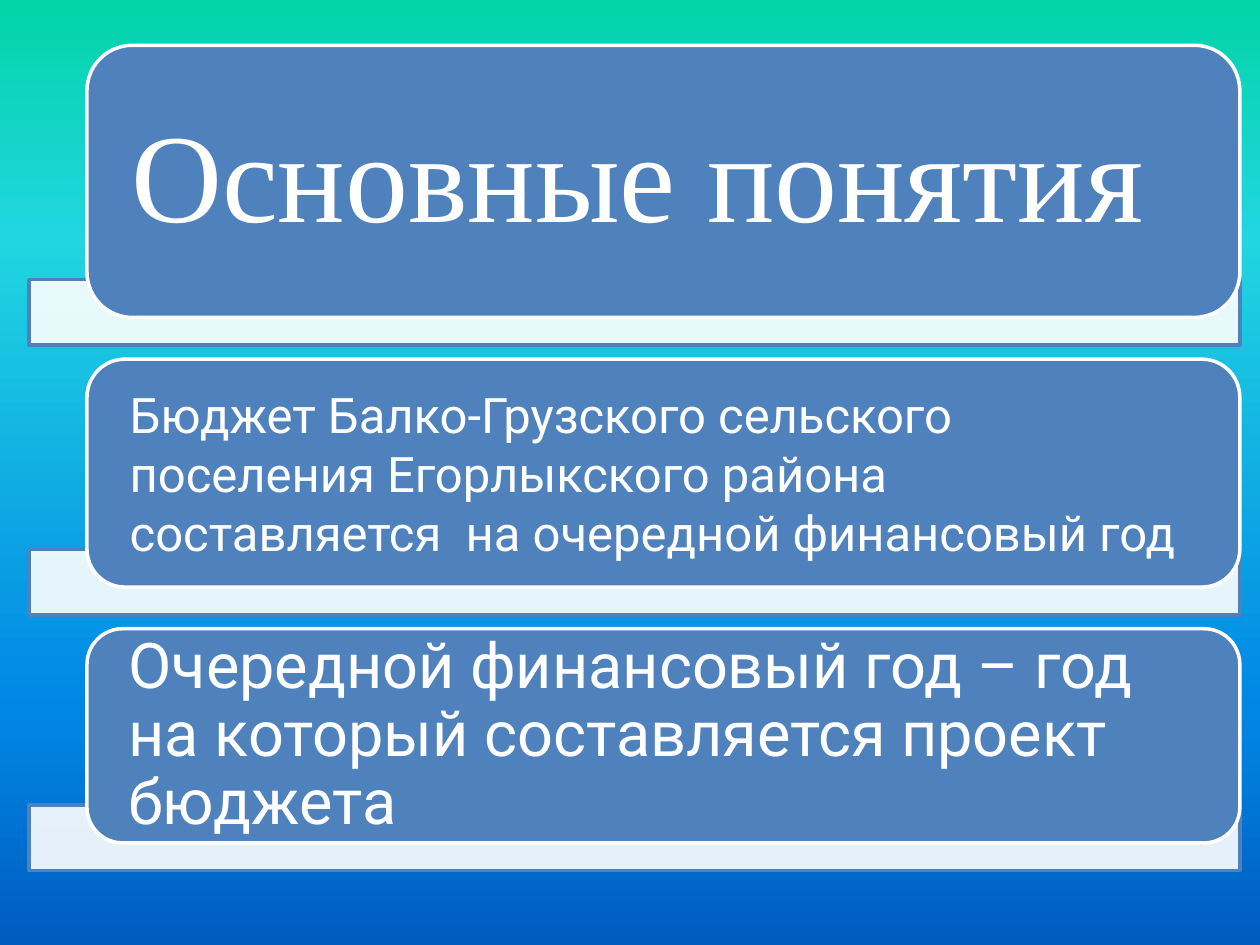
"""Build the slide of basic budget concepts: three rounded panels over white bars."""
from lxml import etree
from pptx import Presentation
from pptx.dml.color import RGBColor
from pptx.enum.shapes import MSO_SHAPE as Shape
from pptx.enum.text import MSO_ANCHOR as Anchor, PP_ALIGN as Align
from pptx.oxml.ns import qn
from pptx.util import Inches, Pt

BLUE, WHITE = "4F81BD", "FFFFFF"
GRADIENT = [(0, "03D4A8"), (25, "21D6E0"), (75, "0087E6"), (100, "005CBF")]
PANELS = [
    (0.36, 2.16, 0.1, "Основные понятия", 72, "Times New Roman", 0.9),
    (2.85, 1.81, 0.09, "Бюджет Балко-Грузского сельского поселения Егорлыкского района "
     "составляется  на очередной финансовый год", 28, "Roboto", 1.0),
    (4.99, 1.7, 0.08, "Очередной финансовый год – год на который составляется проект бюджета",
     36, "Roboto", 0.9),
]


def color(value):
    return RGBColor.from_string(value)


def add_block(slide, kind, left, top, width, height, fill, line):
    shape = slide.shapes.add_shape(kind, Inches(left), Inches(top), Inches(width), Inches(height))
    shape.shadow.inherit = False
    shape.fill.solid()
    shape.fill.fore_color.rgb = color(fill)
    shape.line.color.rgb = color(line)
    shape.line.width = Pt(2)
    return shape


presentation = Presentation()
presentation.slide_width, presentation.slide_height = Inches(10), Inches(7.5)
slide = presentation.slides.add_slide(presentation.slide_layouts[6])

background = slide.background.fill
background.gradient()
background.gradient_angle = 270
stops = next(slide.element.iter(qn("a:gsLst")))
for stop in list(stops):
    stops.remove(stop)
for position, value in GRADIENT:
    stop = etree.SubElement(stops, qn("a:gs"), pos=str(position * 1000))
    etree.SubElement(stop, qn("a:srgbClr"), val=value)

for top, height, margin, text, size, font, spacing in PANELS:
    bar = add_block(slide, Shape.RECTANGLE, 0.23, top + height - 0.3, 9.61, 0.52, WHITE, BLUE)
    bar_color = bar.fill._xPr.find(qn("a:solidFill"))[0]
    etree.SubElement(bar_color, qn("a:alpha"), val="90000")

    add_block(slide, Shape.ROUNDED_RECTANGLE, 0.69, top, 9.15, height, BLUE, WHITE)

    box = slide.shapes.add_textbox(Inches(0.69 + margin), Inches(top + margin),
                                   Inches(9.15 - 2 * margin), Inches(height - 2 * margin))
    frame = box.text_frame
    frame.word_wrap = True
    frame.vertical_anchor = Anchor.MIDDLE
    frame.margin_left = frame.margin_right = Inches(0.25)
    frame.margin_top = frame.margin_bottom = 0
    paragraph = frame.paragraphs[0]
    paragraph.alignment = Align.LEFT
    paragraph.line_spacing = spacing
    run = paragraph.add_run()
    run.text = text
    run.font.size = Pt(size)
    run.font.name = font
    run.font.color.rgb = color(WHITE)

presentation.save("out.pptx")
